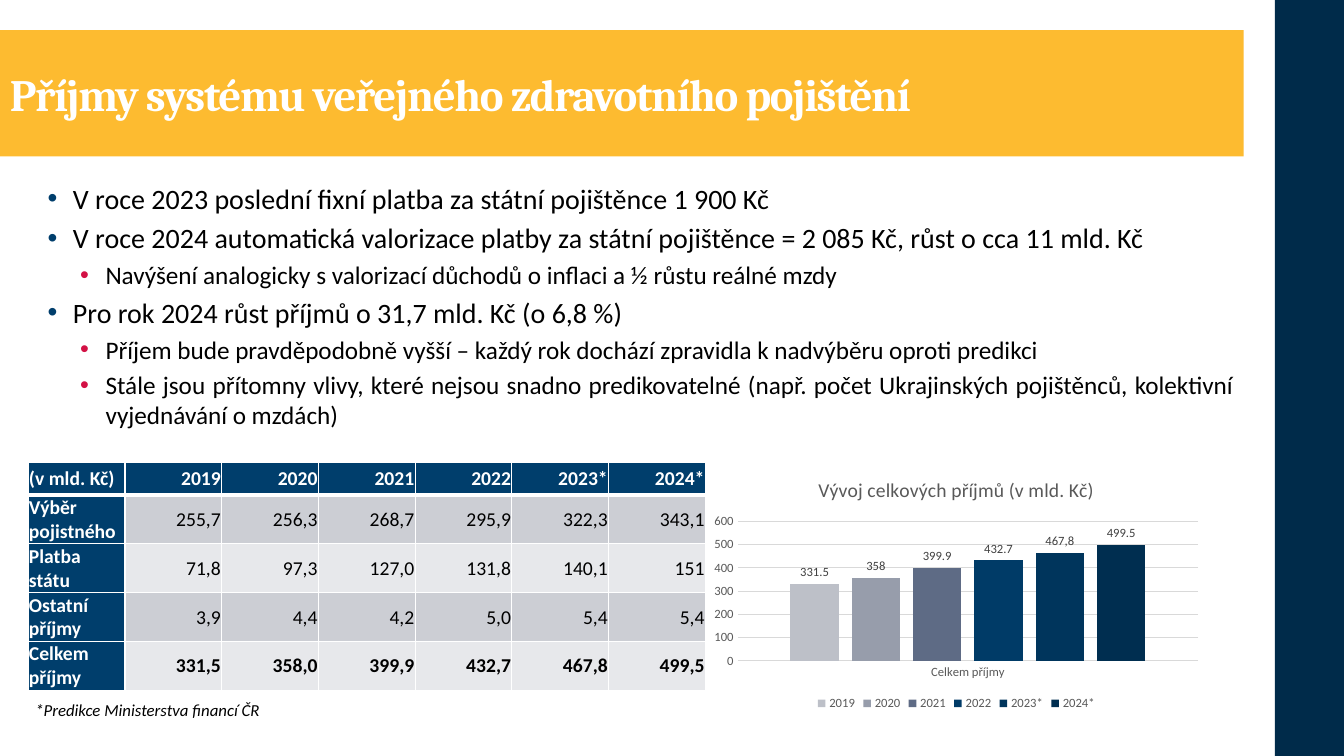
import dataclasses
import typing

import lxml.etree
import pptx
import pptx.chart.data
import pptx.dml.color
import pptx.enum.chart
import pptx.enum.shapes
import pptx.enum.text
import pptx.oxml.ns
import pptx.util

Cm = pptx.util.Cm
Pt = pptx.util.Pt
Rgb = pptx.dml.color.RGBColor.from_string
Align = pptx.enum.text.PP_ALIGN
Mid = pptx.enum.text.MSO_ANCHOR.MIDDLE


@dataclasses.dataclass(frozen=True)
class Theme:
    body: str = "Calibri"
    head: str = "Cambria"
    white: str = "FFFFFF"
    black: str = "000000"
    night: str = "002B4A"
    gold: str = "FDBB30"
    navy: str = "003E6C"
    red: str = "D31145"
    bands: tuple = ("CCCED4", "E7E8EB")
    grey: str = "595959"
    label: str = "404040"
    grid: str = "D9D9D9"
    title: int = 32
    cell: int = 14
    note: int = 12
    chart: int = 10
    small: int = 9


@dataclasses.dataclass(frozen=True)
class Box:
    left: float
    top: float
    width: float
    height: float

    def place(self) -> tuple:
        return tuple(Cm(v) for v in dataclasses.astuple(self))


@dataclasses.dataclass(frozen=True)
class Level:
    size: int
    left: float
    color: str


@dataclasses.dataclass(frozen=True)
class Point:
    level: int
    text: str


@dataclasses.dataclass(frozen=True)
class Bar:
    year: str
    value: float
    color: str
    label: str = ""


THEME = Theme()
LEVELS = (Level(20, 0.95, THEME.navy), Level(18, 1.77, THEME.red))
POINTS = (
    Point(0, "V roce 2023 poslední fixní platba za státní pojištěnce 1 900 Kč"),
    Point(0, "V roce 2024 automatická valorizace platby za státní pojištěnce = 2 085 Kč, růst o cca 11 mld. Kč"),
    Point(1, "Navýšení analogicky s valorizací důchodů o inflaci a ½ růstu reálné mzdy"),
    Point(0, "Pro rok 2024 růst příjmů o 31,7 mld. Kč (o 6,8 %)"),
    Point(1, "Příjem bude pravděpodobně vyšší – každý rok dochází zpravidla k nadvýběru oproti predikci"),
    Point(1, "Stále jsou přítomny vlivy, které nejsou snadno predikovatelné (např. počet Ukrajinských "
             "pojištěnců, kolektivní vyjednávání o mzdách)"),
)
BARS = (
    Bar("2019", 331.5, "BDC0C8"),
    Bar("2020", 358, "979DAB"),
    Bar("2021", 399.9, "5E6B85"),
    Bar("2022", 432.7, "003B67"),
    Bar("2023*", 464.6, "00355C", "467,8"),
    Bar("2024*", 499.5, "002E50"),
)
ROWS = (
    ("(v mld. Kč)", *(bar.year for bar in BARS)),
    ("Výběr pojistného", "255,7", "256,3", "268,7", "295,9", "322,3", "343,1"),
    ("Platba státu", "71,8", "97,3", "127,0", "131,8", "140,1", "151"),
    ("Ostatní příjmy", "3,9", "4,4", "4,2", "5,0", "5,4", "5,4"),
    ("Celkem příjmy", "331,5", "358,0", "399,9", "432,7", "467,8", "499,5"),
)


def apply(thing: typing.Any, **values: typing.Any) -> None:
    for name, value in values.items():
        setattr(thing, name, value)


def style(font: typing.Any, size: int, color: str, **extra: typing.Any) -> None:
    apply(font, **{"name": THEME.body, "size": Pt(size), **extra})
    font.color.rgb = Rgb(color)


def child(parent: typing.Any, tag: str, **values: str) -> typing.Any:
    return lxml.etree.SubElement(parent, pptx.oxml.ns.qn(tag), values)


def block(slide: typing.Any, box: Box, color: str) -> typing.Any:
    shape = slide.shapes.add_shape(pptx.enum.shapes.MSO_SHAPE.RECTANGLE, *box.place())
    shape.shadow.inherit = False
    shape.fill.solid()
    shape.fill.fore_color.rgb = Rgb(color)
    shape.line.fill.background()
    return shape


def draw_title(slide: typing.Any, box: Box, text: str) -> None:
    frame = block(slide, box, THEME.gold).text_frame
    apply(frame, word_wrap=True, vertical_anchor=Mid)
    para = frame.paragraphs[0]
    para.alignment = Align.LEFT
    run = para.add_run()
    run.text = text
    style(run.font, THEME.title, THEME.white, name=THEME.head, bold=True)
    run.font._element.set("spc", "-100")


def draw_points(slide: typing.Any, box: Box) -> None:
    frame = slide.shapes.add_textbox(*box.place()).text_frame
    frame.word_wrap = True
    for num, point in enumerate(POINTS):
        level = LEVELS[point.level]
        para = frame.add_paragraph() if num else frame.paragraphs[0]
        props = para._p.get_or_add_pPr()
        props.set("marL", str(Cm(level.left)))
        props.set("indent", str(Cm(-0.64)))
        child(child(props, "a:buClr"), "a:srgbClr", val=level.color)
        child(props, "a:buFont", typeface="Arial")
        child(props, "a:buChar", char="•")
        apply(para, text=point.text, level=point.level, alignment=Align.JUSTIFY)
        if num:
            para.space_before = Pt(level.size * 0.2)
        style(para.font, level.size, THEME.black)


def draw_table(slide: typing.Any, box: Box) -> None:
    table = slide.shapes.add_table(len(ROWS), len(ROWS[0]), *box.place()).table
    for col in table.columns:
        col.width = Cm(box.width / len(ROWS[0]))
    for y, row in enumerate(ROWS):
        table.rows[y].height = Cm(1.23 if y else 0.81)
        for x, text in enumerate(row):
            cell = table.cell(y, x)
            head = x == 0 or y == 0
            apply(cell, text=text, vertical_anchor=Mid, margin_left=Cm(0.02),
                  margin_right=Cm(0.02), margin_top=Cm(0.02), margin_bottom=0)
            para = cell.text_frame.paragraphs[0]
            para.alignment = Align.RIGHT if x else Align.LEFT
            style(para.font, THEME.cell, THEME.white if head else THEME.black,
                  bold=head or y == len(ROWS) - 1)
            # White borders, thick below the header row
            for side in "LRTB":
                thick = (side, y) in (("B", 0), ("T", 1))
                line = child(cell._tc.get_or_add_tcPr(), f"a:ln{side}", w=str(Pt(3 if thick else 1)))
                child(child(line, "a:solidFill"), "a:srgbClr", val=THEME.white)
            cell.fill.solid()
            cell.fill.fore_color.rgb = Rgb(THEME.navy if head else THEME.bands[(y - 1) % 2])


def draw_chart(slide: typing.Any, box: Box, title: str) -> None:
    enum = pptx.enum.chart
    data = pptx.chart.data.CategoryChartData()
    data.categories = ["Celkem příjmy"]
    for bar in BARS:
        data.add_series(bar.year, [bar.value])
    chart = slide.shapes.add_chart(enum.XL_CHART_TYPE.COLUMN_CLUSTERED, *box.place(), data).chart
    style(chart.font, THEME.chart, THEME.black)
    frame = chart.chart_title.text_frame
    frame.text = title
    style(frame.paragraphs[0].runs[0].font, THEME.cell, THEME.grey, bold=False)
    chart.chart_title.include_in_layout = False

    # Legend and axes
    chart.has_legend = True
    apply(chart.legend, position=enum.XL_LEGEND_POSITION.BOTTOM, include_in_layout=False)
    style(chart.legend.font, THEME.small, THEME.grey)
    none = enum.XL_TICK_MARK.NONE
    for axis in (chart.category_axis, chart.value_axis):
        apply(axis, major_tick_mark=none, minor_tick_mark=none)
        style(axis.tick_labels.font, THEME.small, THEME.grey)
    apply(chart.value_axis, minimum_scale=0, maximum_scale=600, major_unit=100)
    chart.value_axis.format.line.fill.background()
    for part in (chart.category_axis, chart.value_axis.major_gridlines):
        part.format.line.width = Pt(0.75)
        part.format.line.color.rgb = Rgb(THEME.grid)

    # Bars and their labels
    plot = chart.plots[0]
    apply(plot, gap_width=219, overlap=-27, vary_by_categories=False)
    outer = enum.XL_LABEL_POSITION.OUTSIDE_END
    for bar, series in zip(BARS, plot.series):
        series.format.fill.solid()
        series.format.fill.fore_color.rgb = Rgb(bar.color)
        apply(series.data_labels, show_value=True, position=outer)
        style(series.data_labels.font, THEME.small, THEME.label)
        if bar.label:
            label = series.points[0].data_label
            label.text_frame.text = bar.label
            label.position = outer
            style(label.text_frame.paragraphs[0].runs[0].font, THEME.small, THEME.label)


def draw_note(slide: typing.Any, box: Box, text: str) -> None:
    frame = slide.shapes.add_textbox(*box.place()).text_frame
    apply(frame, word_wrap=True, text=text)
    style(frame.paragraphs[0].font, THEME.note, THEME.black, italic=True)


def main() -> None:
    deck = pptx.Presentation()
    apply(deck, slide_width=Cm(33.87), slide_height=Cm(19.05))
    slide = deck.slides.add_slide(deck.slide_layouts[6])
    block(slide, Box(32.13, 0, 1.74, 19.05), THEME.night)
    draw_title(slide, Box(0, 0.76, 31.34, 3.18), "Příjmy systému veřejného zdravotního pojištění")
    draw_points(slide, Box(0.64, 4.45, 30.71, 14.6))
    draw_table(slide, Box(0.71, 11.66, 17.07, 5.73))
    draw_chart(slide, Box(17.75, 11.66, 12.7, 6.35), "Vývoj celkových příjmů (v mld. Kč)")
    draw_note(slide, Box(0.64, 17.5, 11.91, 0.77), "*Predikce Ministerstva financí ČR")
    deck.save("out.pptx")


if __name__ == "__main__":
    main()
